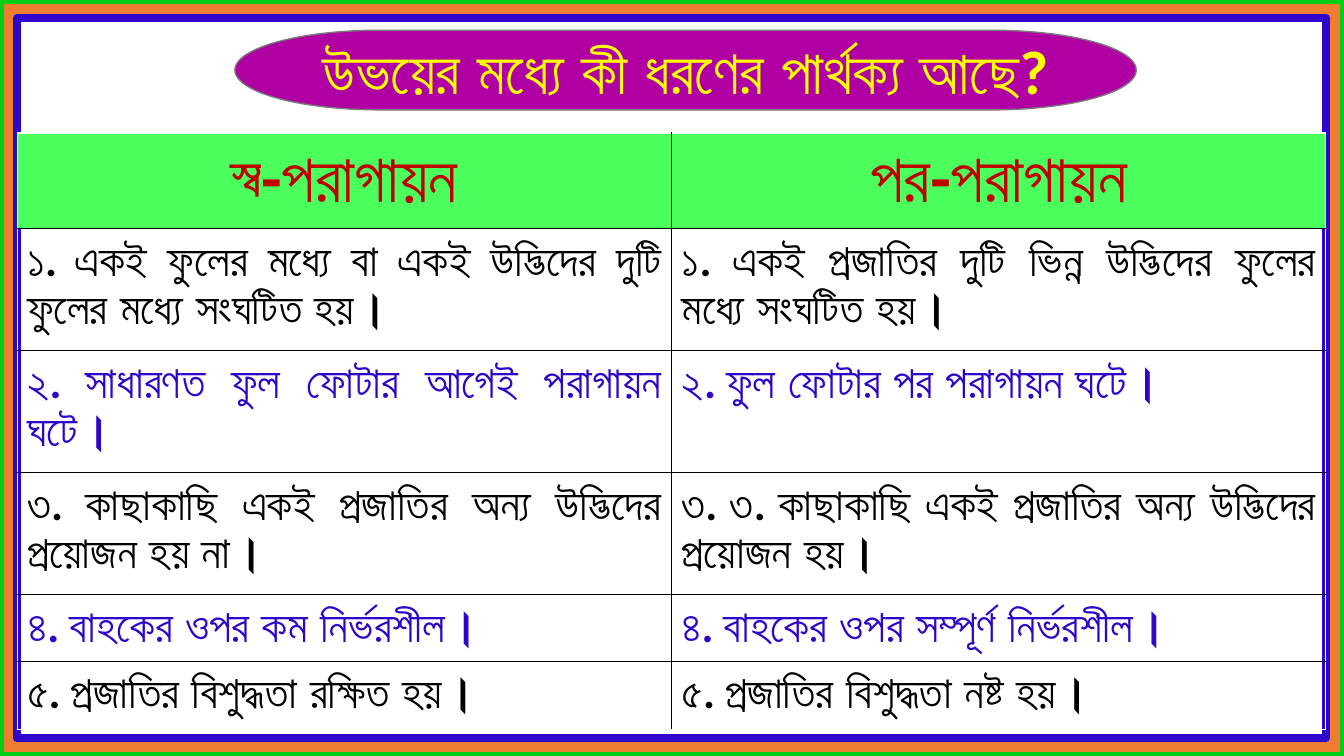
from lxml import etree
from pptx import Presentation
from pptx.dml.color import RGBColor
from pptx.enum.shapes import MSO_SHAPE
from pptx.enum.text import MSO_ANCHOR, PP_ALIGN
from pptx.oxml.ns import qn
from pptx.util import Inches, Pt

CENTER, JUSTIFY = PP_ALIGN.CENTER, PP_ALIGN.JUSTIFY
MIDDLE = MSO_ANCHOR.MIDDLE
FRAME, RECTANGLE = MSO_SHAPE.FRAME, MSO_SHAPE.RECTANGLE
TERMINATOR = MSO_SHAPE.FLOWCHART_TERMINATOR

WHITE = RGBColor(0xFF, 0xFF, 0xFF)
BLACK = RGBColor(0x00, 0x00, 0x00)
ORANGE = RGBColor(0xED, 0x7D, 0x31)
GREEN = RGBColor(0x02, 0xCE, 0x15)
LIGHT_GREEN = RGBColor(0x4B, 0xFF, 0x5C)
BLUE = RGBColor(0x2F, 0x05, 0xCB)
PURPLE = RGBColor(0xB0, 0x00, 0xA3)
GRAY = RGBColor(0x7A, 0x7A, 0x7A)
RED = RGBColor(0xC0, 0x00, 0x00)
YELLOW = RGBColor(0xFF, 0xFF, 0x00)

TITLE = "উভয়ের মধ্যে কী ধরণের পার্থক্য আছে?"
ROWS = [
    ("স্ব-পরাগায়ন", "পর-পরাগায়ন"),
    ("১. একই ফুলের মধ্যে বা একই উদ্ভিদের দুটি ফুলের মধ্যে সংঘটিত হয়।",
     "১. একই প্রজাতির দুটি ভিন্ন উদ্ভিদের ফুলের মধ্যে সংঘটিত হয়।"),
    ("২. সাধারণত ফুল ফোটার আগেই পরাগায়ন ঘটে।",
     "২. ফুল ফোটার পর পরাগায়ন ঘটে।"),
    ("৩. কাছাকাছি একই প্রজাতির অন্য উদ্ভিদের প্রয়োজন হয় না।",
     "৩. ৩. কাছাকাছি একই প্রজাতির অন্য উদ্ভিদের প্রয়োজন হয়।"),
    ("৪. বাহকের ওপর কম নির্ভরশীল।",
     "৪. বাহকের ওপর সম্পূর্ণ নির্ভরশীল।"),
    ("৫. প্রজাতির বিশুদ্ধতা রক্ষিত হয়।",
     "৫. প্রজাতির বিশুদ্ধতা নষ্ট হয়।"),
]
ROW_HEIGHTS = [0.95, 1.21, 1.21, 1.21, 0.66, 0.68]
COLUMN_WIDTH = 6.49

deck = Presentation()
deck.slide_width, deck.slide_height = Inches(13.33), Inches(7.5)
page = deck.slides.add_slide(deck.slide_layouts[6])


def add_box(kind, left, top, width, height, fill, line, line_width):
    box = page.shapes.add_shape(
        kind, Inches(left), Inches(top), Inches(width), Inches(height))
    box.shadow.inherit = False
    box.fill.solid()
    box.fill.fore_color.rgb = fill
    box.line.color.rgb = line
    box.line.width = Pt(line_width)
    return box


def write(text_frame, text, size, color, alignment):
    para = text_frame.paragraphs[0]
    para.text = text
    para.alignment = alignment
    para.font.name = "Calibri"
    para.font.size = Pt(size)
    para.font.bold = True
    para.font.color.rgb = color


# Borders of the page
add_box(FRAME, 0, 0, 13.33, 7.5, ORANGE, GREEN, 6)
add_box(RECTANGLE, 0.17, 0.18, 12.98, 7.14, WHITE, BLUE, 6)

# Comparison table: black inner lines, white outer edge
table = page.shapes.add_table(
    len(ROWS), 2, Inches(0.17), Inches(1.32),
    Inches(2 * COLUMN_WIDTH), Inches(sum(ROW_HEIGHTS))).table
for column in table.columns:
    column.width = Inches(COLUMN_WIDTH)

for row, texts in enumerate(ROWS):
    table.rows[row].height = Inches(ROW_HEIGHTS[row])
    for column, text in enumerate(texts):
        cell = table.cell(row, column)
        outer_edges = {
            "a:lnL": column == 0,
            "a:lnR": column == 1,
            "a:lnT": row == 0,
            "a:lnB": row == len(ROWS) - 1,
        }
        properties = cell._tc.get_or_add_tcPr()
        for edge, is_outer in outer_edges.items():
            line = etree.SubElement(properties, qn(edge), w=str(Pt(1)))
            fill = etree.SubElement(line, qn("a:solidFill"))
            color = WHITE if is_outer else BLACK
            etree.SubElement(fill, qn("a:srgbClr"), val=str(color))
        if row == 0:
            cell.fill.solid()
            cell.fill.fore_color.rgb = LIGHT_GREEN
            write(cell.text_frame, text, 48, RED, CENTER)
        else:
            cell.fill.background()
            text_color = BLACK if row % 2 else BLUE
            write(cell.text_frame, text, 32, text_color, JUSTIFY)

# Title
title = add_box(TERMINATOR, 2.33, 0.3, 8.94, 0.79, PURPLE, GRAY, 1)
title.text_frame.word_wrap = True
title.text_frame.vertical_anchor = MIDDLE
write(title.text_frame, TITLE, 44, YELLOW, CENTER)

deck.save("out.pptx")
